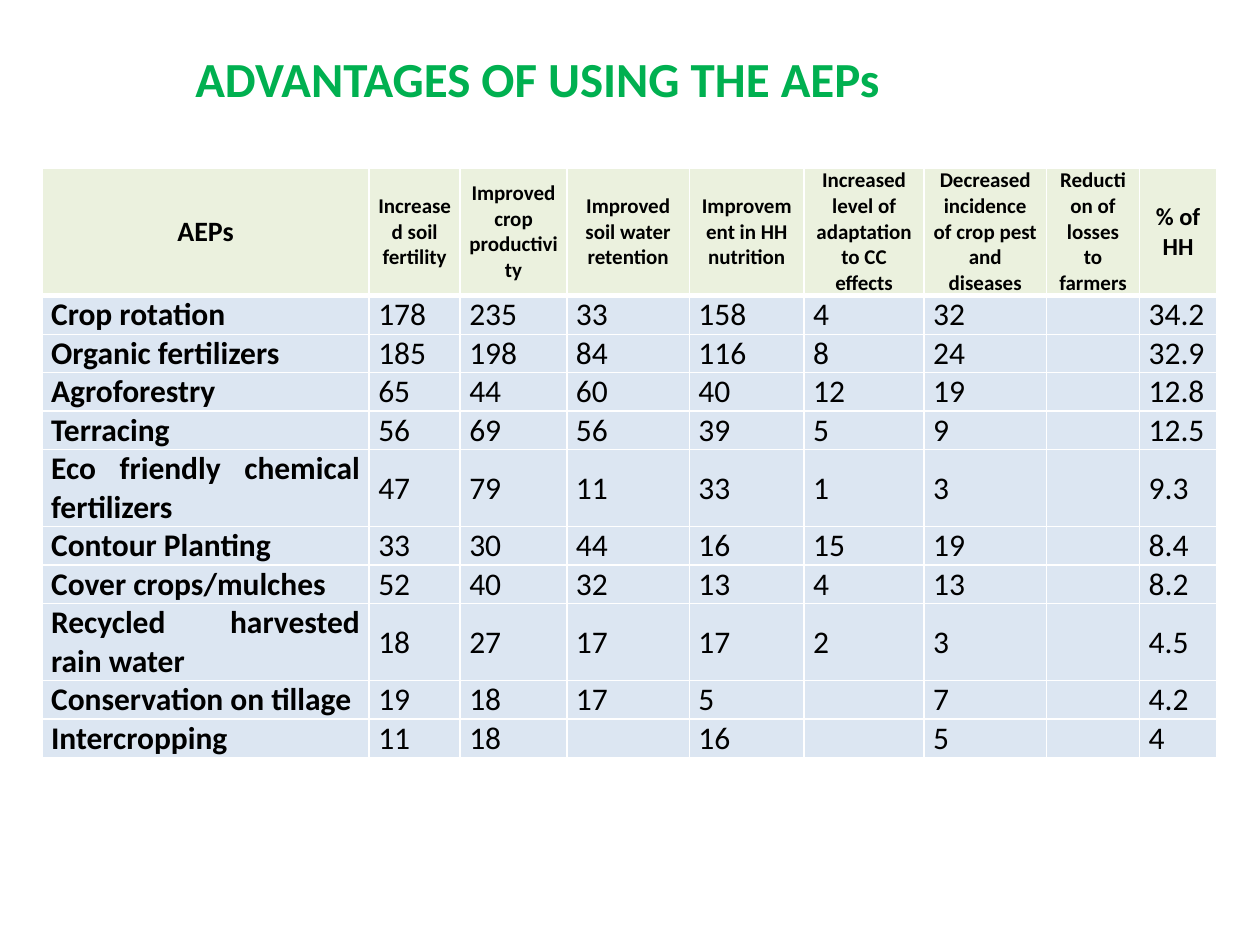
import pptx
import pptx.dml.color
import pptx.enum.text
import pptx.oxml
import pptx.oxml.ns
import pptx.util

Pt = pptx.util.Pt
ALIGN = pptx.enum.text.PP_ALIGN
ANCHOR = pptx.enum.text.MSO_ANCHOR

COLORS = {
    "title": "00B050",
    "text": "000000",
    "header": "EBF1DE",
    "body": "DCE6F2",
    "border": "FFFFFF",
}
FONT = "Calibri"

COLUMN_WIDTHS = [187, 52, 61, 70, 65.6, 68.5, 70, 53.2, 44]
HEADERS = [
    "AEPs",
    "Increased soil fertility",
    "Improved crop productivity",
    "Improved soil water retention",
    "Improvement in HH nutrition",
    "Increased level of adaptation to CC effects",
    "Decreased incidence of crop pest and diseases",
    "Reduction of losses to farmers",
    "% of HH",
]
HEADER_SIZES = [16] + [12] * 7 + [14]
PRACTICES = [
    ["Crop rotation", "178", "235", "33", "158", "4", "32", "", "34.2"],
    ["Organic fertilizers", "185", "198", "84", "116", "8", "24", "", "32.9"],
    ["Agroforestry", "65", "44", "60", "40", "12", "19", "", "12.8"],
    ["Terracing", "56", "69", "56", "39", "5", "9", "", "12.5"],
    ["Eco friendly chemical fertilizers", "47", "79", "11", "33", "1", "3", "", "9.3"],
    ["Contour Planting", "33", "30", "44", "16", "15", "19", "", "8.4"],
    ["Cover crops/mulches", "52", "40", "32", "13", "4", "13", "", "8.2"],
    ["Recycled harvested rain water", "18", "27", "17", "17", "2", "3", "", "4.5"],
    ["Conservation on tillage", "19", "18", "17", "5", "", "7", "", "4.2"],
    ["Intercropping", "11", "18", "", "16", "", "5", "", "4"],
]
HEADER_HEIGHT = 73
LINE_HEIGHT = 22
LINE_CHARACTERS = 24


def rgb(name):
    return pptx.dml.color.RGBColor.from_string(COLORS[name])


def format_paragraph(para, size, color, bold, align):
    para.alignment = align
    for span in para.runs:
        span.font.name = FONT
        span.font.size = Pt(size)
        span.font.bold = bold
        span.font.color.rgb = rgb(color)


def set_borders(cell, top, bottom):
    properties = cell._tc.get_or_add_tcPr()
    widths = {"lnL": 1, "lnR": 1, "lnT": top, "lnB": bottom}
    for index, (side, width) in enumerate(widths.items()):
        line = pptx.oxml.parse_xml(
            f'<a:{side} {pptx.oxml.ns.nsdecls("a")} w="{Pt(width)}">'
            f'<a:solidFill><a:srgbClr val="{COLORS["border"]}"/></a:solidFill>'
            f"</a:{side}>"
        )
        properties.insert(index, line)


def fill_cell(cell, text, fill, size, bold, align):
    cell.margin_left = cell.margin_right = Pt(5.2)
    cell.margin_top = cell.margin_bottom = 0
    cell.vertical_anchor = ANCHOR.MIDDLE
    cell.fill.solid()
    cell.fill.fore_color.rgb = rgb(fill)
    if text:
        cell.text_frame.text = text
        format_paragraph(cell.text_frame.paragraphs[0], size, "text", bold, align)


def add_title(page, left, top, width, height):
    box = page.shapes.title
    box.left, box.top, box.width, box.height = Pt(left), Pt(top), Pt(width), Pt(height)
    frame = box.text_frame
    frame.text = "ADVANTAGES OF USING THE AEPs"
    frame.word_wrap = False
    frame.auto_size = pptx.enum.text.MSO_AUTO_SIZE.SHAPE_TO_FIT_TEXT
    frame.vertical_anchor = ANCHOR.TOP
    format_paragraph(frame.paragraphs[0], 28, "title", True, ALIGN.CENTER)


def add_advantages_table(page, left, top, width):
    row_heights = [HEADER_HEIGHT] + [
        LINE_HEIGHT * (2 if len(practice[0]) > LINE_CHARACTERS else 1)
        for practice in PRACTICES
    ]
    table = page.shapes.add_table(
        len(row_heights), len(HEADERS),
        Pt(left), Pt(top), Pt(width), Pt(sum(row_heights)),
    ).table
    for column, column_width in zip(table.columns, COLUMN_WIDTHS):
        column.width = Pt(column_width * width / sum(COLUMN_WIDTHS))
    for row, row_height in zip(table.rows, row_heights):
        row.height = Pt(row_height)
    for index, (header, size) in enumerate(zip(HEADERS, HEADER_SIZES)):
        cell = table.cell(0, index)
        fill_cell(cell, header, "header", size, True, ALIGN.CENTER)
        set_borders(cell, 1, 3)
    for row_index, practice in enumerate(PRACTICES, 1):
        for index, value in enumerate(practice):
            cell = table.cell(row_index, index)
            fill_cell(cell, value, "body", 18, index == 0, ALIGN.JUSTIFY)
            set_borders(cell, 3 if row_index == 1 else 1, 1)


def main():
    deck = pptx.Presentation()
    deck.slide_width, deck.slide_height = Pt(720), Pt(540)
    page = deck.slides.add_slide(deck.slide_layouts[5])
    add_title(page, 102, 24, 410, 41)
    add_advantages_table(page, 24, 96, 671.3)
    deck.save("out.pptx")


if __name__ == "__main__":
    main()
